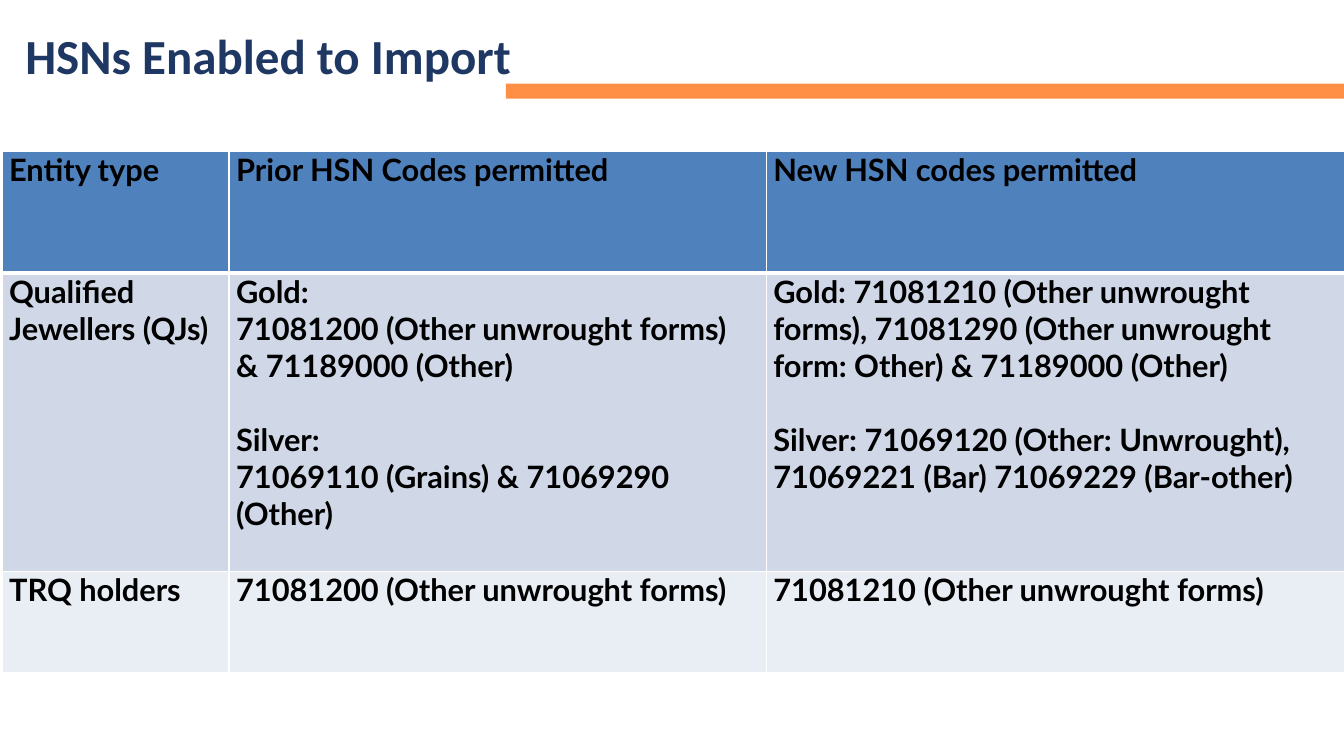
from lxml import etree
from pptx import Presentation
from pptx.dml.color import RGBColor
from pptx.enum import shapes, text
from pptx.oxml import ns
from pptx.util import Cm, Pt

NAVY = RGBColor(0x1F, 0x38, 0x63)
ORANGE = RGBColor(0xFF, 0x6E, 0x0D)
BLACK = RGBColor(0x00, 0x00, 0x00)
WHITE = RGBColor(0xFF, 0xFF, 0xFF)
HEADER_BLUE = RGBColor(0x4F, 0x81, 0xBD)
BAND_DARK = RGBColor(0xD0, 0xD8, 0xE8)
BAND_LIGHT = RGBColor(0xE9, 0xED, 0xF4)

SLIDE_WIDTH, SLIDE_HEIGHT = Cm(33.87), Cm(19.05)
COLUMN_WIDTHS = [Cm(5.72), Cm(13.54), Cm(14.61)]
ROW_HEIGHTS = [Cm(3.07), Cm(7.52), Cm(2.54)]
ROW_FILLS = [HEADER_BLUE, BAND_DARK, BAND_LIGHT]
GROUP_GAP = Pt(26.4)  # one line of 22 pt text

# Each cell is a list of groups (one per metal), each group a list of paragraphs.
HSN_ROWS = [
    [[["Entity type"]], [["Prior HSN Codes permitted"]], [["New HSN codes permitted"]]],
    [
        [["Qualified Jewellers (QJs)"]],
        [
            ["Gold:", "71081200 (Other unwrought forms)", "& 71189000 (Other)"],
            ["Silver:", "71069110 (Grains) & 71069290 (Other)"],
        ],
        [
            ["Gold: 71081210 (Other unwrought forms), 71081290 (Other unwrought "
             "form: Other) & 71189000 (Other)"],
            ["Silver: 71069120 (Other: Unwrought),",
             "71069221 (Bar) 71069229 (Bar-other)"],
        ],
    ],
    [
        [["TRQ holders"]],
        [["71081200 (Other unwrought forms)"]],
        [["71081210 (Other unwrought forms)"]],
    ],
]


def add_accent_bar(slide, left, top, width, height):
    bar = slide.shapes.add_shape(
        shapes.MSO_SHAPE.RECTANGLE, left, top, width, height)
    bar.shadow.inherit = False
    bar.line.fill.background()
    bar.fill.solid()
    bar.fill.fore_color.rgb = ORANGE
    color = bar.fill._xPr.find(".//" + ns.qn("a:srgbClr"))
    etree.SubElement(color, ns.qn("a:alpha"), val="77000")


def add_title(slide, left, top, width, height):
    frame = slide.shapes.add_textbox(left, top, width, height).text_frame
    frame.margin_left = frame.margin_right = 0
    frame.margin_top = frame.margin_bottom = 0
    frame.word_wrap = True
    heading = frame.paragraphs[0]
    heading.text = "HSNs Enabled to Import"
    heading.font.name = "Calibri"
    heading.font.size = Pt(35)
    heading.font.bold = True
    heading.font.color.rgb = NAVY


def set_borders(cell, top, bottom):
    """Draw white cell borders; top and bottom are widths in points."""
    properties = cell._tc.get_or_add_tcPr()
    for side, points in (("L", 1), ("R", 1), ("T", top), ("B", bottom)):
        line = etree.SubElement(
            properties, ns.qn(f"a:ln{side}"), w=str(Pt(points)))
        fill = etree.SubElement(line, ns.qn("a:solidFill"))
        etree.SubElement(fill, ns.qn("a:srgbClr"), val=str(WHITE))


def fill_cell(cell, groups, color):
    cell.margin_left = cell.margin_right = Cm(0.18)
    cell.margin_top = cell.margin_bottom = 0
    cell.vertical_anchor = text.MSO_ANCHOR.TOP
    cell.fill.solid()
    cell.fill.fore_color.rgb = color

    frame = cell.text_frame
    frame.text = "\n".join(line for group in groups for line in group)
    for paragraph in frame.paragraphs:
        paragraph.font.name = "Lato"
        paragraph.font.size = Pt(22)
        paragraph.font.bold = True
        paragraph.font.color.rgb = BLACK

    start = 0
    for group in groups[:-1]:
        start += len(group)
        frame.paragraphs[start].space_before = GROUP_GAP


def add_hsn_table(slide, left, top):
    table = slide.shapes.add_table(
        len(HSN_ROWS), len(COLUMN_WIDTHS), left, top,
        sum(COLUMN_WIDTHS), sum(ROW_HEIGHTS)).table
    for column, width in zip(table.columns, COLUMN_WIDTHS):
        column.width = width
    for r, (entity, height, color) in enumerate(
            zip(HSN_ROWS, ROW_HEIGHTS, ROW_FILLS)):
        table.rows[r].height = height
        for c, groups in enumerate(entity):
            cell = table.cell(r, c)
            set_borders(cell, top=3 if r == 1 else 1, bottom=3 if r == 0 else 1)
            fill_cell(cell, groups, color)


def main():
    prs = Presentation()
    prs.slide_width, prs.slide_height = SLIDE_WIDTH, SLIDE_HEIGHT
    slide = prs.slides.add_slide(prs.slide_layouts[6])
    bar_left = Cm(12.75)
    add_accent_bar(slide, bar_left, Cm(2.11), SLIDE_WIDTH - bar_left, Cm(0.38))
    add_hsn_table(slide, Cm(0.05), Cm(3.81))
    add_title(slide, Cm(0.64), Cm(0.64), Cm(22.02), Cm(1.5))
    prs.save("out.pptx")


if __name__ == "__main__":
    main()
